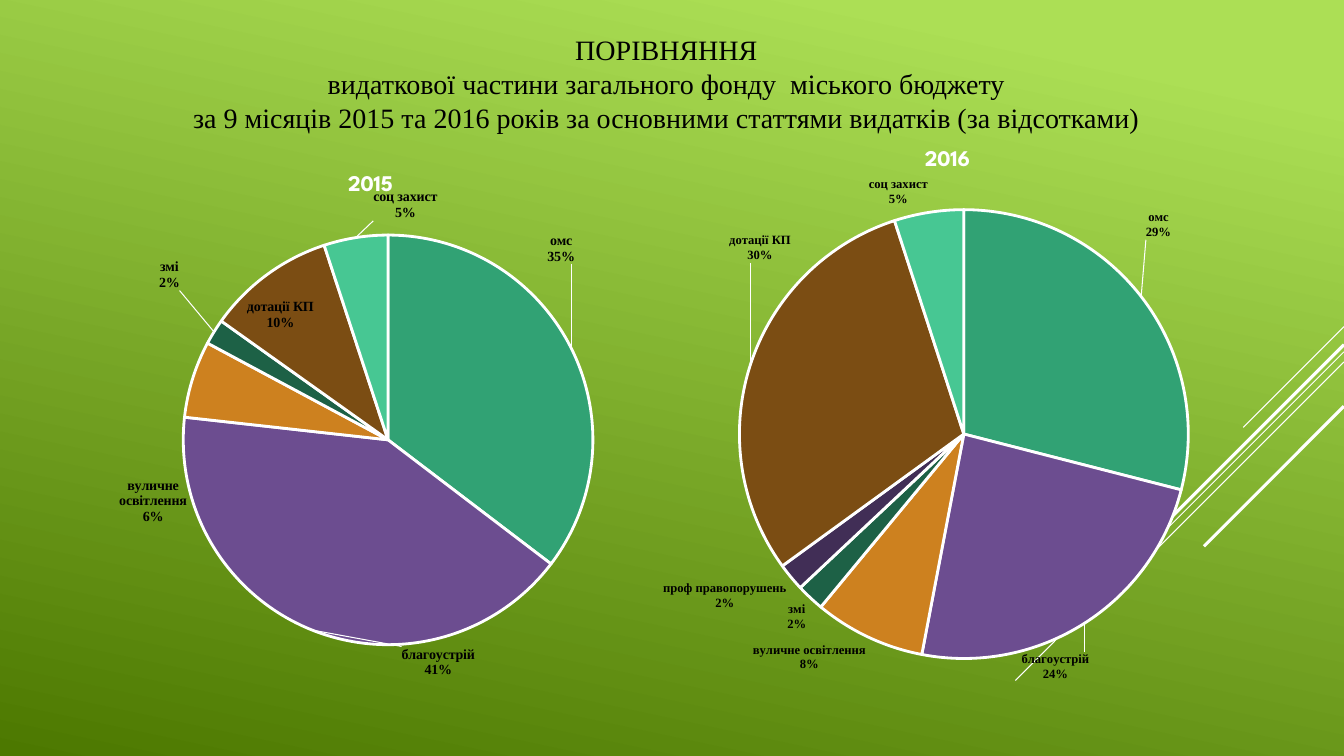
from copy import deepcopy
from dataclasses import dataclass, field

from pptx import Presentation
from pptx.chart.chart import Chart
from pptx.chart.data import CategoryChartData
from pptx.dml.color import RGBColor
from pptx.enum.chart import XL_CHART_TYPE, XL_LABEL_POSITION
from pptx.enum.shapes import MSO_CONNECTOR
from pptx.enum.text import MSO_ANCHOR, MSO_AUTO_SIZE, PP_ALIGN
from pptx.oxml import parse_xml
from pptx.oxml.ns import nsdecls, qn
from pptx.oxml.xmlchemy import OxmlElement
from pptx.slide import Slide
from pptx.util import Pt

PIE = XL_CHART_TYPE.PIE
BEST_FIT = XL_LABEL_POSITION.BEST_FIT
STRAIGHT = MSO_CONNECTOR.STRAIGHT
MIDDLE = MSO_ANCHOR.MIDDLE
NO_AUTOFIT = MSO_AUTO_SIZE.NONE
CENTER = PP_ALIGN.CENTER

SLIDE_WIDTH, SLIDE_HEIGHT = 960, 540


@dataclass(frozen=True)
class Theme:
    light: RGBColor = RGBColor.from_string("ACDF55")
    dark: RGBColor = RGBColor.from_string("4C7800")
    white: RGBColor = RGBColor.from_string("FFFFFF")
    black: RGBColor = RGBColor.from_string("000000")
    slices: tuple[str, ...] = ("31A274", "6C4D90", "CD811F", "1D6146",
                               "412E56", "7B4D13", "47C793")
    text_font: str = "Times New Roman"
    chart_font: str = "League Spartan"
    heading_size: int = 20
    year_size: int = 16
    chart_size: int = 10


@dataclass(frozen=True)
class Ray:
    """A 45-degree line running down and left from the right edge."""
    top: float
    run: float
    weight: float


@dataclass(frozen=True)
class BudgetPie:
    year: str
    box: tuple[float, float, float, float]
    plot: tuple[float, float, float, float]
    shares: tuple[int | None, ...]
    label_size: int
    label_shifts: dict[int, tuple[float, float]] = field(default_factory=dict)


THEME = Theme()
HEADING = (
    "ПОРІВНЯННЯ",
    "видаткової частини загального фонду  міського бюджету",
    "за 9 місяців 2015 та 2016 років за основними статтями видатків (за відсотками)",
)
EXPENSES = ("омс", "благоустрій", "вуличне освітлення", "змі",
            "проф правопорушень", "дотації КП", "соц захист")
RAYS = (
    Ray(233.3, 72, 0.75),
    Ray(251.3, 234.7, 0.75),
    Ray(258.5, 149, 0.75),
    Ray(246.2, 137.5, 2.25),
    Ray(290.2, 100, 2.25),
)
PIES = (
    BudgetPie("2015", (54, 109.4, 421.2, 390.2), (0.11, 0.15, 0.84, 0.75),
              (35, 41, 6, 2, None, 10, 5), 10,
              {0: (-0.05, -0.15), 1: (0.28, 0.02), 2: (0, 0.27),
               3: (-0.05, -0.07), 6: (0.14, -0.02)}),
    BudgetPie("2016", (442.1, 90.7, 469.4, 421.9), (0.1, 0.14, 0.85, 0.76),
              (29, 24, 8, 2, 2, 30, 5), 9,
              {0: (0, -0.09), 1: (-0.1, 0.04), 5: (0.07, -0.17)}),
)


def paint_background(slide: Slide) -> None:
    fill = slide.background.fill
    fill.gradient()
    fill.gradient_angle = 258
    stops = zip(fill.gradient_stops, (THEME.light, THEME.dark), (0.1, 1))
    for stop, color, position in stops:
        stop.color.rgb = color
        stop.position = position


def write_heading(slide: Slide) -> None:
    heading = slide.shapes.title
    heading.left, heading.top = Pt(54), Pt(22)
    heading.width, heading.height = Pt(844), Pt(75)
    frame = heading.text_frame
    frame.text = "\n".join(HEADING)
    frame.word_wrap = True
    frame.auto_size = NO_AUTOFIT
    frame.vertical_anchor = MIDDLE
    for paragraph in frame.paragraphs:
        paragraph.alignment = CENTER
        paragraph.line_spacing = Pt(24)
        paragraph.font.name = THEME.text_font
        paragraph.font.size = Pt(THEME.heading_size)
        paragraph.font.color.rgb = THEME.black


def draw_ray(slide: Slide, ray: Ray) -> None:
    line = slide.shapes.add_connector(
        STRAIGHT, Pt(SLIDE_WIDTH), Pt(ray.top),
        Pt(SLIDE_WIDTH - ray.run), Pt(ray.top + ray.run))
    line.line.color.rgb = THEME.white
    line.line.width = Pt(ray.weight)
    line._element.spPr.append(OxmlElement("a:effectLst"))


def fix_plot(chart: Chart, plot: tuple[float, float, float, float]) -> None:
    """Set the inner plot area as fractions of the chart."""
    area = chart._chartSpace.chart.plotArea
    for layout in area.findall(qn("c:layout")):
        area.remove(layout)
    x, y, w, h = plot
    area.insert(0, parse_xml(
        f'<c:layout {nsdecls("c")}><c:manualLayout><c:layoutTarget val="inner"/>'
        '<c:xMode val="edge"/><c:yMode val="edge"/>'
        f'<c:x val="{x}"/><c:y val="{y}"/><c:w val="{w}"/><c:h val="{h}"/>'
        '</c:manualLayout></c:layout>'))


def label_slices(chart: Chart, pie: BudgetPie) -> None:
    labels = chart.plots[0].series[0].data_labels
    labels.show_value = False
    labels.show_category_name = True
    labels.show_percentage = True
    labels.number_format = "0%"
    labels.number_format_is_linked = False
    labels.position = BEST_FIT
    labels.font.name = THEME.text_font
    labels.font.size = Pt(pie.label_size)
    labels.font.bold = True
    labels.font.color.rgb = THEME.black

    group = labels._element
    separator = OxmlElement("c:separator")
    separator.text = "\n"
    group.find(qn("c:showBubbleSize")).addnext(separator)
    shared = [child for child in group if child.tag != qn("c:showLeaderLines")]
    for place, (index, (dx, dy)) in enumerate(pie.label_shifts.items()):
        label = parse_xml(
            f'<c:dLbl {nsdecls("c")}><c:idx val="{index}"/><c:layout>'
            f'<c:manualLayout><c:x val="{dx}"/><c:y val="{dy}"/>'
            '</c:manualLayout></c:layout></c:dLbl>')
        label.extend(deepcopy(shared))
        group.insert(place, label)
    group.append(parse_xml(
        f'<c:leaderLines {nsdecls("c", "a")}><c:spPr><a:ln w="9525"><a:solidFill>'
        f'<a:srgbClr val="{THEME.white}"/></a:solidFill></a:ln></c:spPr>'
        '</c:leaderLines>'))


def draw_pie(slide: Slide, pie: BudgetPie) -> None:
    data = CategoryChartData()
    data.categories = EXPENSES
    data.add_series(pie.year, pie.shares)
    chart = slide.shapes.add_chart(PIE, *map(Pt, pie.box), data).chart
    chart.has_legend = False
    chart.font.name = THEME.chart_font
    chart.font.size = Pt(THEME.chart_size)
    chart.font.color.rgb = THEME.white

    chart.has_title = True
    year = chart.chart_title.text_frame
    year.text = pie.year
    year_font = year.paragraphs[0].font
    year_font.name = THEME.chart_font
    year_font.size = Pt(THEME.year_size)
    year_font.bold = True
    year_font.color.rgb = THEME.white

    fix_plot(chart, pie.plot)
    chart.plots[0].vary_by_categories = True
    points = chart.plots[0].series[0].points
    for index, color in enumerate(THEME.slices):
        slice_format = points[index].format
        slice_format.fill.solid()
        slice_format.fill.fore_color.rgb = RGBColor.from_string(color)
        slice_format.line.color.rgb = THEME.white
        slice_format.line.width = Pt(2)
    label_slices(chart, pie)


def main() -> None:
    deck = Presentation()
    deck.slide_width, deck.slide_height = Pt(SLIDE_WIDTH), Pt(SLIDE_HEIGHT)
    slide = deck.slides.add_slide(deck.slide_layouts.get_by_name("Title Only"))
    paint_background(slide)
    write_heading(slide)
    for ray in RAYS:
        draw_ray(slide, ray)
    for pie in PIES:
        draw_pie(slide, pie)
    deck.save("out.pptx")


if __name__ == "__main__":
    main()
